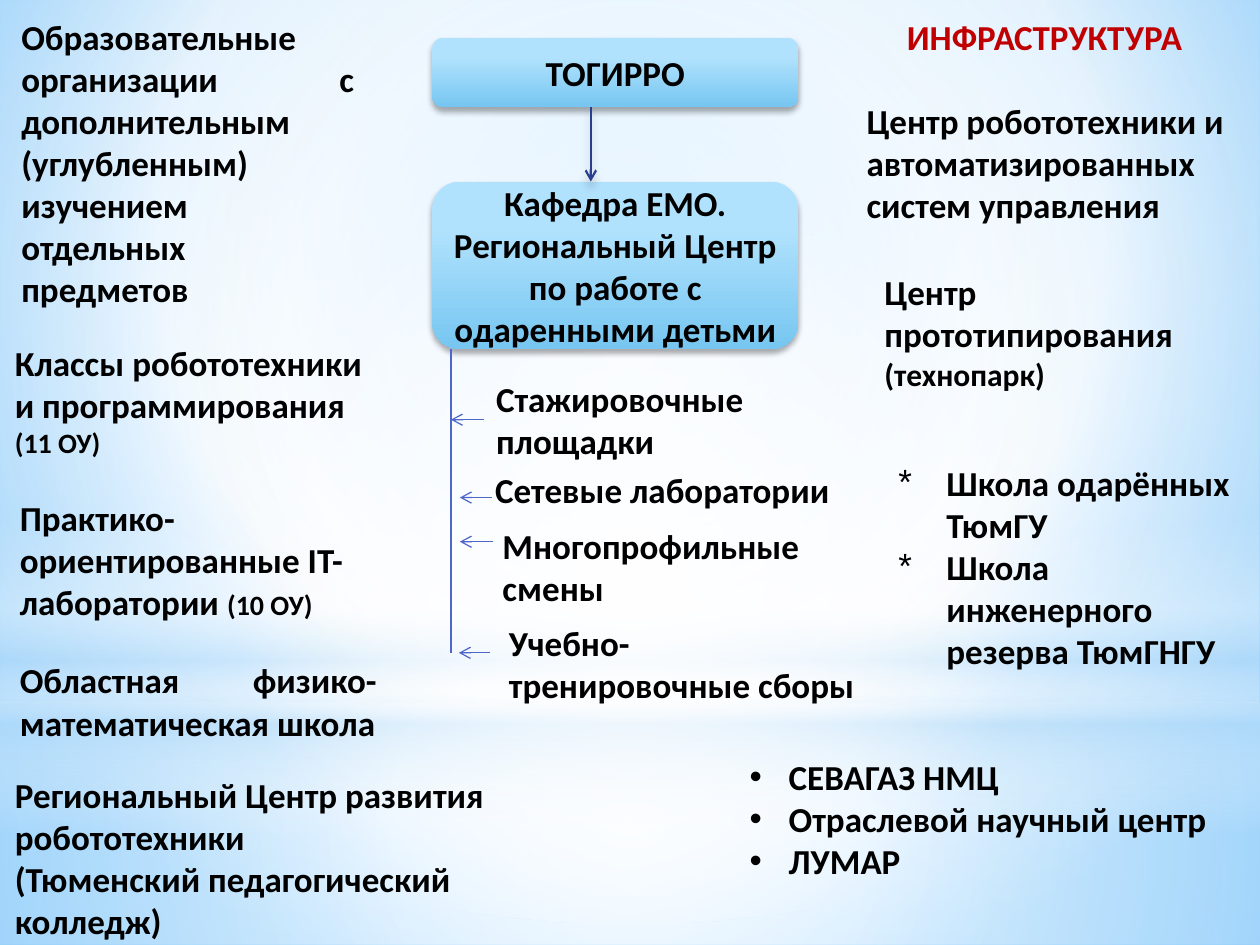
from lxml.etree import SubElement
from pptx import Presentation
from pptx.dml.color import RGBColor
from pptx.enum.shapes import MSO_CONNECTOR, MSO_SHAPE
from pptx.enum.text import MSO_ANCHOR, PP_ALIGN
from pptx.oxml.ns import qn
from pptx.util import Cm, Pt

BLACK = RGBColor(0x00, 0x00, 0x00)
WHITE = RGBColor(0xFF, 0xFF, 0xFF)
RED = RGBColor(0xC0, 0x00, 0x00)
SKY = RGBColor(0x9E, 0xD5, 0xFF)
AZURE = RGBColor(0x5B, 0xB9, 0xFF)
PALE = RGBColor(0xB4, 0xDC, 0xFA)
BOX_TOP = RGBColor(0xB1, 0xE2, 0xFD)
BOX_BOTTOM = RGBColor(0x76, 0xC6, 0xF1)
NAVY = RGBColor(0x2A, 0x3E, 0x8E)
BLUE = RGBColor(0x4E, 0x67, 0xC8)

CENTER = (50, 50, 50, 50)
LEFT, RIGHT, JUSTIFY = PP_ALIGN.LEFT, PP_ALIGN.RIGHT, PP_ALIGN.JUSTIFY


def paint_gradient(parent, stops, focus=None):
    solid = parent.find(qn("a:solidFill"))
    gradient = parent.makeelement(qn("a:gradFill"), {"rotWithShape": "1"})
    parent.replace(solid, gradient)
    stop_list = SubElement(gradient, qn("a:gsLst"))
    for position, color, opacity in stops:
        stop = SubElement(stop_list, qn("a:gs"), pos=str(position * 1000))
        tint = SubElement(stop, qn("a:srgbClr"), val=str(color))
        if opacity < 100:
            SubElement(tint, qn("a:alpha"), val=str(opacity * 1000))
    if focus:
        circle = SubElement(gradient, qn("a:path"), {"path": "circle"})
        sides = {side: str(share * 1000) for side, share in zip("ltrb", focus)}
        SubElement(circle, qn("a:fillToRect"), sides)
    else:
        SubElement(gradient, qn("a:lin"), ang="5400000", scaled="0")


def write_text(frame, paragraphs, alignment, color=BLACK):
    frame.word_wrap = True
    for index, runs in enumerate(paragraphs):
        paragraph = frame.paragraphs[0] if index == 0 else frame.add_paragraph()
        paragraph.alignment = alignment
        for text, size in runs:
            run = paragraph.add_run()
            run.text = text
            run.font.color.rgb = color
            text_format = {"name": "Calibri", "size": Pt(size), "bold": True}
            for name, value in text_format.items():
                setattr(run.font, name, value)


presentation = Presentation()
presentation.slide_width = Cm(25.4)
presentation.slide_height = Cm(19.05)
slide = presentation.slides.add_slide(presentation.slide_layouts[6])
shapes = slide.shapes

slide.background.fill.solid()
paint_gradient(
    slide.background._cSld.find(".//" + qn("p:bgPr")),
    [(0, SKY, 100), (60, WHITE, 100), (100, AZURE, 100)],
    (20, 10, 20, 60),
)

glows = [
    (MSO_SHAPE.RECTANGLE, 14.17, 4.88, CENTER,
     [(0, WHITE, 91), (37, WHITE, 76), (100, PALE, 79)]),
    (MSO_SHAPE.RECTANGLE, 0, 14.17, CENTER,
     [(0, WHITE, 89), (48, WHITE, 62), (100, PALE, 79)]),
    (MSO_SHAPE.RECTANGLE, 10.46, 6.35, None,
     [(0, WHITE, 0), (29, WHITE, 30), (45, PALE, 40),
      (55, WHITE, 26), (65, PALE, 60), (100, WHITE, 0)]),
    (MSO_SHAPE.OVAL, 4.45, 14.17, CENTER,
     [(0, WHITE, 100), (56, WHITE, 0)]),
]
for preset, top, height, focus, stops in glows:
    shape = shapes.add_shape(preset, 0, Cm(top), Cm(25.4), Cm(height))
    shape.fill.solid()
    paint_gradient(shape._element.spPr, stops, focus)
    shape.line.fill.background()
    shape.shadow.inherit = False

texts = [
    (2.49, 0.18, 21.59, 1.12, RIGHT, RED, [[("ИНФРАСТРУКТУРА", 20)]]),
    (9.73, 9.32, 7.39, 1.12, LEFT, BLACK, [[("Сетевые лаборатории", 20)]]),
    (0.05, 6.76, 7.57, 2.64, LEFT, BLACK,
     [[("Классы робототехники и программирования ", 20), ("(11 ОУ)", 16)]]),
    (0.15, 9.88, 7.65, 2.82, LEFT, BLACK,
     [[("Практико-ориентированные IT-лаборатории ", 20), ("(10 ОУ)", 16)]]),
    (17.22, 1.88, 8.26, 2.82, LEFT, BLACK,
     [[("Центр робототехники и автоматизированных систем управления", 20)]]),
    (17.58, 5.33, 7.65, 2.74, LEFT, BLACK,
     [[("Центр прототипирования ", 20), ("(технопарк)", 18)]]),
    (0.15, 13.16, 7.7, 1.96, JUSTIFY, BLACK,
     [[("Областная физико-математическая школа", 20)]]),
    (0.05, 15.47, 10.64, 3.68, LEFT, BLACK,
     [[("Региональный Центр развития робототехники", 20)],
      [("(Тюменский педагогический колледж)", 20)]]),
    (0.18, 0.18, 7.21, 6.25, JUSTIFY, BLACK,
     [[("Образовательные организации с дополнительным (углубленным) "
        "изучением отдельных предметов", 20)]]),
    (9.75, 7.49, 6.71, 1.96, LEFT, BLACK,
     [[("Стажировочные", 20)], [("площадки", 20)]]),
    (9.88, 10.44, 7.11, 1.96, LEFT, BLACK, [[("Многопрофильные смены", 20)]]),
    (10.01, 12.4, 7.65, 1.96, LEFT, BLACK,
     [[("Учебно-тренировочные сборы", 20)]]),
]
for left, top, width, height, alignment, color, paragraphs in texts:
    text_box = shapes.add_textbox(Cm(left), Cm(top), Cm(width), Cm(height))
    write_text(text_box.text_frame, paragraphs, alignment, color)

lists = [
    (17.86, 9.17, 7.37, 4.52, "*", 0.97,
     ["Школа одарённых ТюмГУ", "Школа инженерного резерва ТюмГНГУ"]),
    (14.86, 15.11, 10.54, 2.82, "•", 0.79,
     ["СЕВАГАЗ НМЦ", "Отраслевой научный центр", "ЛУМАР"]),
]
for left, top, width, height, bullet, indent, items in lists:
    text_box = shapes.add_textbox(Cm(left), Cm(top), Cm(width), Cm(height))
    write_text(text_box.text_frame, [[(item, 20)] for item in items], LEFT)
    for paragraph in text_box.text_frame.paragraphs:
        properties = paragraph._p.get_or_add_pPr()
        properties.set("marL", str(Cm(indent)))
        properties.set("indent", str(-Cm(indent)))
        SubElement(properties, qn("a:buFont"), typeface="Arial")
        SubElement(properties, qn("a:buChar"), char=bullet)

boxes = [
    (0.76, 1.4, ["ТОГИРРО"]),
    (3.66, 3.38,
     ["Кафедра ЕМО.", "Региональный Центр по работе с одаренными детьми"]),
]
shadowed = []
for top, height, lines in boxes:
    box = shapes.add_shape(
        MSO_SHAPE.ROUNDED_RECTANGLE, Cm(8.71), Cm(top), Cm(7.39), Cm(height))
    box.fill.solid()
    paint_gradient(box._element.spPr, [(28, BOX_TOP, 100), (100, BOX_BOTTOM, 100)])
    box.line.fill.background()
    box.shadow.inherit = False
    box.text_frame.vertical_anchor = MSO_ANCHOR.MIDDLE
    write_text(box.text_frame, [[(line, 20)] for line in lines], PP_ALIGN.CENTER)
    shadowed.append((box._element.spPr.find(qn("a:effectLst")), 3.5, 2.2, 32))

connectors = [
    (11.91, 2.16, 11.91, 3.66, NAVY, 1.25, True),
    (9.09, 7.04, 9.09, 13.16, BLUE, 0.75, False),
    (9.75, 8.46, 9.09, 8.46, BLUE, 0.75, True),
    (9.91, 10.03, 9.27, 10.03, BLUE, 0.75, True),
    (9.93, 10.92, 9.27, 10.92, BLUE, 0.75, True),
    (9.88, 13.16, 9.25, 13.16, BLUE, 0.75, True),
]
for start_x, start_y, end_x, end_y, color, weight, has_arrow in connectors:
    connector = shapes.add_connector(
        MSO_CONNECTOR.STRAIGHT, Cm(start_x), Cm(start_y), Cm(end_x), Cm(end_y))
    connector.line.color.rgb = color
    connector.line.width = Pt(weight)
    if has_arrow:
        SubElement(connector.line._get_or_add_ln(), qn("a:tailEnd"), type="arrow")
    effects = SubElement(connector._element.spPr, qn("a:effectLst"))
    if color == NAVY:
        shadowed.append((effects, 5, 4, 20))

for effects, blur, distance, opacity in shadowed:
    shadow = SubElement(
        effects, qn("a:outerShdw"), blurRad=str(Pt(blur)), dist=str(Pt(distance)),
        dir="5400000", rotWithShape="0")
    tint = SubElement(shadow, qn("a:srgbClr"), val=str(BLACK))
    SubElement(tint, qn("a:alpha"), val=str(opacity * 1000))

presentation.save("out.pptx")
